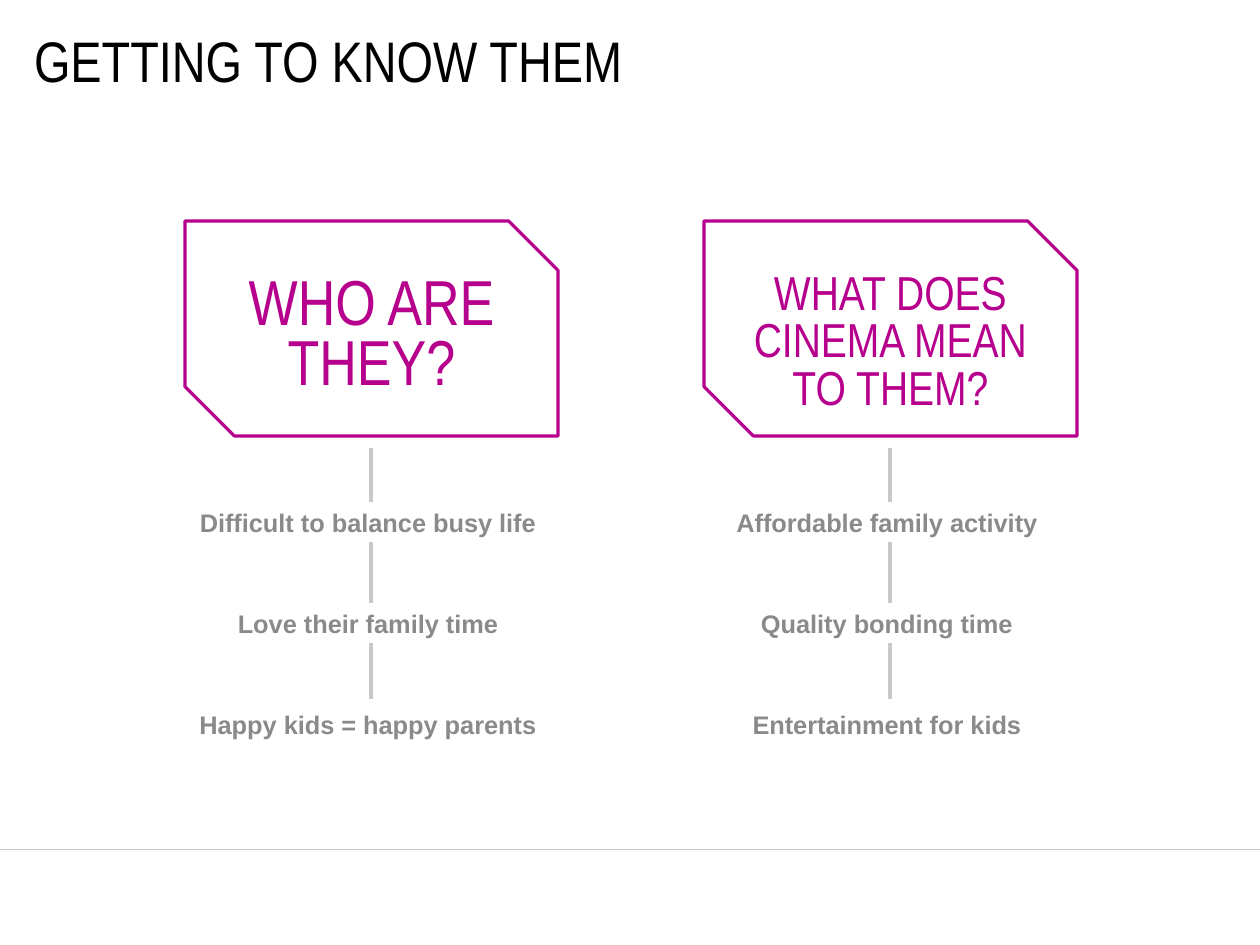
from lxml import etree
from pptx import Presentation
from pptx.dml.color import RGBColor
from pptx.enum.shapes import MSO_CONNECTOR, MSO_SHAPE
from pptx.enum.text import MSO_ANCHOR, MSO_AUTO_SIZE, PP_ALIGN
from pptx.oxml.ns import qn
from pptx.util import Pt

TITLE = "GETTING TO KNOW THEM"
COLUMNS = [
    {"heading": "WHO ARE THEY?", "size": 40, "leading": 38, "top": 271, "height": 134,
     "items": ["Difficult to balance busy life", "Love their family time",
               "Happy kids = happy parents"]},
    {"heading": "WHAT DOES\vCINEMA MEAN\vTO THEM?", "size": 30, "leading": 30,
     "top": 266, "height": 155,
     "items": ["Affordable family activity", "Quality bonding time",
               "Entertainment for kids"]},
]

SLIDE_W, SLIDE_H = 1260, 945
COLUMN_X, COLUMN_STEP = 185, 519
CARD_Y, CARD_W, CARD_H = 221, 373, 215
HEADING_W = 347
SPINE_TOP, SPINE_BOTTOM = 448, 699
ITEM_Y, ITEM_STEP, ITEM_W, ITEM_H = 502, 101, 447, 40
FOOTER_Y = 849
MAGENTA, LIGHT_GREY, TEXT_GREY = "B6008D", "CAC8C8", "8A8A8D"
WHITE, BLACK = "FFFFFF", "000000"

LEFT, CENTER = PP_ALIGN.LEFT, PP_ALIGN.CENTER
MIDDLE = MSO_ANCHOR.MIDDLE
NO_AUTOFIT = MSO_AUTO_SIZE.NONE
SNIPPED, RECT = MSO_SHAPE.SNIP_2_DIAG_RECTANGLE, MSO_SHAPE.RECTANGLE
STRAIGHT = MSO_CONNECTOR.STRAIGHT


def px(n):
    return n * 8000


def color(value):
    return RGBColor.from_string(value)


def place(s, x, y, w, h):
    s.left, s.top, s.width, s.height = px(x), px(y), px(w), px(h)


def write(s, text, font, ink, align, insets, leading=None):
    """Fill a shape with one paragraph; insets run left, top, right, bottom."""
    tf = s.text_frame
    left, top, right, bottom = map(px, insets)
    frame = {"word_wrap": True, "auto_size": NO_AUTOFIT, "vertical_anchor": MIDDLE,
             "margin_left": left, "margin_top": top,
             "margin_right": right, "margin_bottom": bottom}
    for name, value in frame.items():
        setattr(tf, name, value)
    p = tf.paragraphs[0]
    p.text = text
    p.alignment, p.space_before = align, Pt(0)
    if leading:
        p.line_spacing = Pt(leading)
    for r in p.runs:
        for name, value in font.items():
            setattr(r.font, name, value)
        r.font.color.rgb = color(ink)


def add_line(shapes, x1, y1, x2, y2, width):
    s = shapes.add_connector(STRAIGHT, px(x1), px(y1), px(x2), px(y2))
    s.line.color.rgb = color(LIGHT_GREY)
    s.line.width = Pt(width)
    etree.SubElement(s._element.spPr, qn("a:effectLst"))


def add_card(shapes, x):
    s = shapes.add_shape(SNIPPED, px(x), px(CARD_Y), px(CARD_W), px(CARD_H))
    s.adjustments[0], s.adjustments[1] = 0, 0.23
    s.shadow.inherit = False
    s.fill.background()
    s.line.color.rgb = color(MAGENTA)
    s.line.width = Pt(2)


def add_item(shapes, text, x, y):
    s = shapes.add_shape(RECT, px(x), px(y), px(ITEM_W), px(ITEM_H))
    s.shadow.inherit = False
    s.fill.solid()
    s.fill.fore_color.rgb = color(WHITE)
    s.line.fill.background()
    font = {"name": "Arial", "size": Pt(16), "bold": True}
    write(s, text, font, TEXT_GREY, CENTER, (11, 5, 18, 5))


def main():
    prs = Presentation()
    prs.slide_width, prs.slide_height = px(SLIDE_W), px(SLIDE_H)
    slide = prs.slides.add_slide(prs.slide_layouts.get_by_name("Comparison"))
    shapes = slide.shapes
    title, heading_1, list_1, heading_2, list_2 = slide.placeholders
    for unused in (list_1, list_2):
        unused._element.getparent().remove(unused._element)

    place(title, 34, 34, 1164, 52)
    write(title, TITLE, {"name": "Arial Narrow", "size": Pt(36), "bold": False},
          BLACK, LEFT, (0, 0, 0, 0))
    add_line(shapes, 0, FOOTER_Y, SLIDE_W, FOOTER_Y, 0.5)

    for i, (column, heading) in enumerate(zip(COLUMNS, (heading_1, heading_2))):
        card_x = COLUMN_X + i * COLUMN_STEP
        center = card_x + CARD_W // 2
        add_card(shapes, card_x)
        place(heading, center - HEADING_W // 2, column["top"], HEADING_W, column["height"])
        font = {"name": "Arial Narrow", "size": Pt(column["size"]), "bold": False}
        write(heading, column["heading"], font, MAGENTA, CENTER, (11, 6, 11, 6),
              column["leading"])
        add_line(shapes, center, SPINE_TOP, center, SPINE_BOTTOM, 2)
        for j, item in enumerate(column["items"]):
            add_item(shapes, item, center - ITEM_W // 2, ITEM_Y + j * ITEM_STEP)

    prs.save("out.pptx")


if __name__ == "__main__":
    main()
